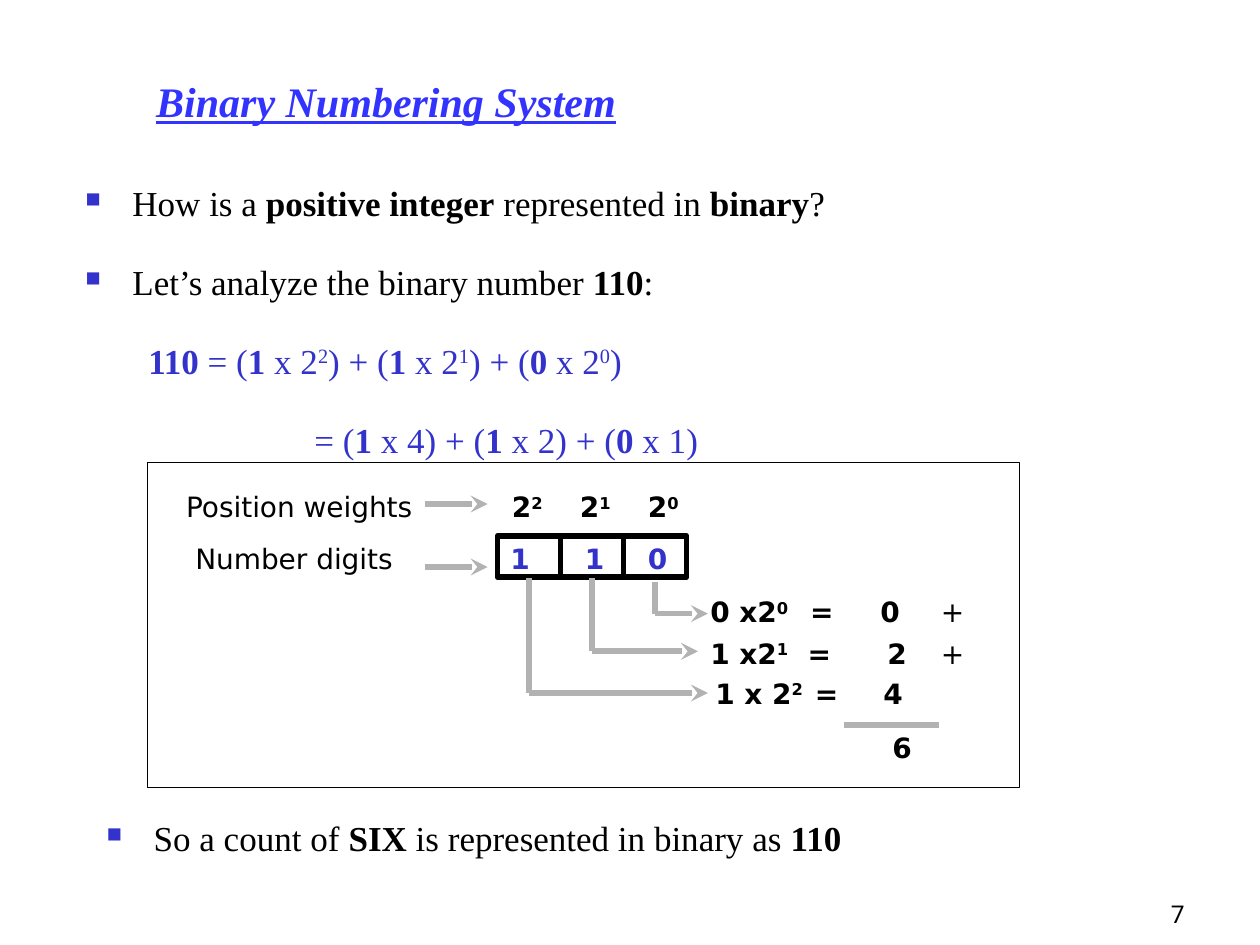
import pptx
import pptx.util
import pptx.dml.color
import pptx.enum.shapes
import pptx.enum.text
import pptx.oxml
import pptx.oxml.ns
import lxml.etree

Cm, Pt = pptx.util.Cm, pptx.util.Pt
color = pptx.dml.color.RGBColor.from_string
qn = pptx.oxml.ns.qn
ALIGN, ANCHOR = pptx.enum.text.PP_ALIGN, pptx.enum.text.MSO_ANCHOR
BLACK, BLUE, GRAY = "000000", "3333CC", "B2B2B2"

presentation = pptx.Presentation()
presentation.slide_width, presentation.slide_height = Cm(25.4), Cm(19.05)
slide = presentation.slides.add_slide(presentation.slide_layouts[6])


def add_text(left, top, width, height, lines, size=16, font="DejaVu Sans",
             ink=BLACK, align=ALIGN.LEFT, anchor=ANCHOR.TOP):
    """Add a text box; *stars* mark bold and ^ raises the next character."""
    box = slide.shapes.add_textbox(Cm(left), Cm(top), Cm(width), Cm(height))
    frame = box.text_frame
    frame.word_wrap = True
    frame.vertical_anchor = anchor
    for number, line in enumerate(lines):
        paragraph = frame.add_paragraph() if number else frame.paragraphs[0]
        paragraph.alignment = align
        paragraph.font.name, paragraph.font.size = font, Pt(size)
        paragraph.font.color.rgb = color(ink)
        for part_number, part in enumerate(line.split("*")):
            plain, *raised = part.split("^")
            pieces = [(plain, False)]
            for text in raised:
                pieces += [(text[0], True), (text[1:], False)]
            for text, is_raised in pieces:
                if text:
                    run = paragraph.add_run()
                    run.text = text
                    run.font.bold = part_number % 2 == 1
                    if is_raised:
                        run._r.get_or_add_rPr().set("baseline", "30000")
    return frame


def add_line(start_x, start_y, end_x, end_y, arrow=False):
    connector = slide.shapes.add_connector(
        pptx.enum.shapes.MSO_CONNECTOR.STRAIGHT,
        Cm(start_x), Cm(start_y), Cm(end_x), Cm(end_y))
    connector.line.color.rgb = color(GRAY)
    connector.line.width = Pt(3.25)
    properties = connector._element.spPr
    if arrow:
        outline = properties.find(qn("a:ln"))
        lxml.etree.SubElement(outline, qn("a:tailEnd"), type="stealth")
    lxml.etree.SubElement(properties, qn("a:effectLst"))


# Title
title = add_text(2.9, 1.12, 20.12, 1.55, ["*Binary Numbering System*"], 24,
                 "Times New Roman", "3333FF", anchor=ANCHOR.BOTTOM)
title.paragraphs[0].font.italic = True
title.paragraphs[0].font.underline = True

# Questions, expansion and conclusion
body = add_text(1.47, 3.12, 22.23, 6.2, [
    "How is a *positive integer* represented in *binary*?",
    "Let’s analyze the binary number *110*:",
    "*110* = (*1* x 2^2) + (*1* x 2^1) + (*0* x 2^0)",
    "= (*1* x 4) + (*1* x 2) + (*0* x 1)"], 20, "Times New Roman")
conclusion = add_text(1.9, 16.33, 22.43, 1.27,
                      ["So a count of *SIX* is represented in binary as *110*"],
                      20, "Times New Roman")
for paragraph in body.paragraphs:
    paragraph.line_spacing = 1.5
    paragraph.space_before = Pt(9)
for paragraph, indent in zip(body.paragraphs[2:], (1.27, 4.62)):
    paragraph.font.color.rgb = color(BLUE)
    paragraph._p.get_or_add_pPr().set("marL", str(Cm(indent)))

# Square bullets, placed ahead of the paragraph's default font
for paragraph in (*body.paragraphs[:2], conclusion.paragraphs[0]):
    properties = paragraph._p.get_or_add_pPr()
    properties.set("marL", str(Cm(0.95)))
    properties.set("indent", str(-Cm(0.95)))
    bullet_color = lxml.etree.Element(qn("a:buClr"))
    lxml.etree.SubElement(bullet_color, qn("a:srgbClr"), val=BLUE)
    bullet_size = lxml.etree.Element(qn("a:buSzPct"), val="60000")
    bullet = lxml.etree.Element(qn("a:buChar"), char="■")
    default_font = properties.find(qn("a:defRPr"))
    for element in (bullet_color, bullet_size, bullet):
        default_font.addprevious(element)

# Diagram frame and the three digit cells
cells = [(10.03 + 1.27 * column, 10.8, 1.27, 0.84, 3.25) for column in range(3)]
for left, top, width, height, weight in [(2.97, 9.32, 17.58, 6.55, 0.75)] + cells:
    shape = slide.shapes.add_shape(pptx.enum.shapes.MSO_SHAPE.RECTANGLE,
                                   Cm(left), Cm(top), Cm(width), Cm(height))
    shape.shadow.inherit = False
    shape.fill.background()
    shape.line.color.rgb = color(BLACK)
    shape.line.width = Pt(weight)

# Row labels with arrows, position weights and digits
add_text(3.23, 9.75, 5.61, 0.94, ["Position weights"], align=ALIGN.CENTER)
add_text(3.68, 10.8, 4.5, 0.94, ["Number digits"], align=ALIGN.CENTER)
for y in (10.16, 11.43):
    add_line(8.56, y, 9.83, y, arrow=True)
for column, (digit, left) in enumerate(zip("110", (9.85, 11.35, 12.62))):
    add_text(9.83 + 1.37 * column, 9.75, 1.6, 0.94, [f"*2^{2 - column}*"],
             align=ALIGN.CENTER)
    add_text(left, 10.8, 1.27, 0.94, [f"*{digit}*"], ink=BLUE,
             align=ALIGN.CENTER)

# Elbow from each digit to its product
for x, top, bottom, end in [(13.21, 11.73, 12.37, 14.27),
                            (11.94, 11.66, 13.13, 14.07),
                            (10.67, 11.66, 13.97, 14.27)]:
    add_line(x, top, x, bottom)
    add_line(x, bottom, end, bottom, arrow=True)

# Products: term, equals sign, value
for top, term, term_left, equals_left, value, value_left in [
        (11.86, "0 x2^0", 14.07, 16.08, 0, 17.5),
        (12.7, "1 x2^1", 14.07, 16.03, 2, 17.64),
        (13.51, "1 x 2^2", 14.17, 16.18, 4, 17.56)]:
    for left, text, width in [(term_left, term, 2.6), (equals_left, "=", 1.2),
                              (value_left, value, 1.2)]:
        add_text(left, top, width, 0.94, [f"*{text}*"])

# Sum
for top in (11.86, 12.7):
    add_text(18.57, top, 1.27, 0.94, ["+"], align=ALIGN.CENTER)
add_line(17.02, 14.61, 18.92, 14.61)
add_text(17.55, 14.61, 1.27, 0.94, ["*6*"], align=ALIGN.CENTER)

# Page number
add_text(18.85, 17.58, 5.28, 1.27, ["7"], 14, "Roboto", align=ALIGN.RIGHT,
         anchor=ANCHOR.BOTTOM)

presentation.save("out.pptx")
